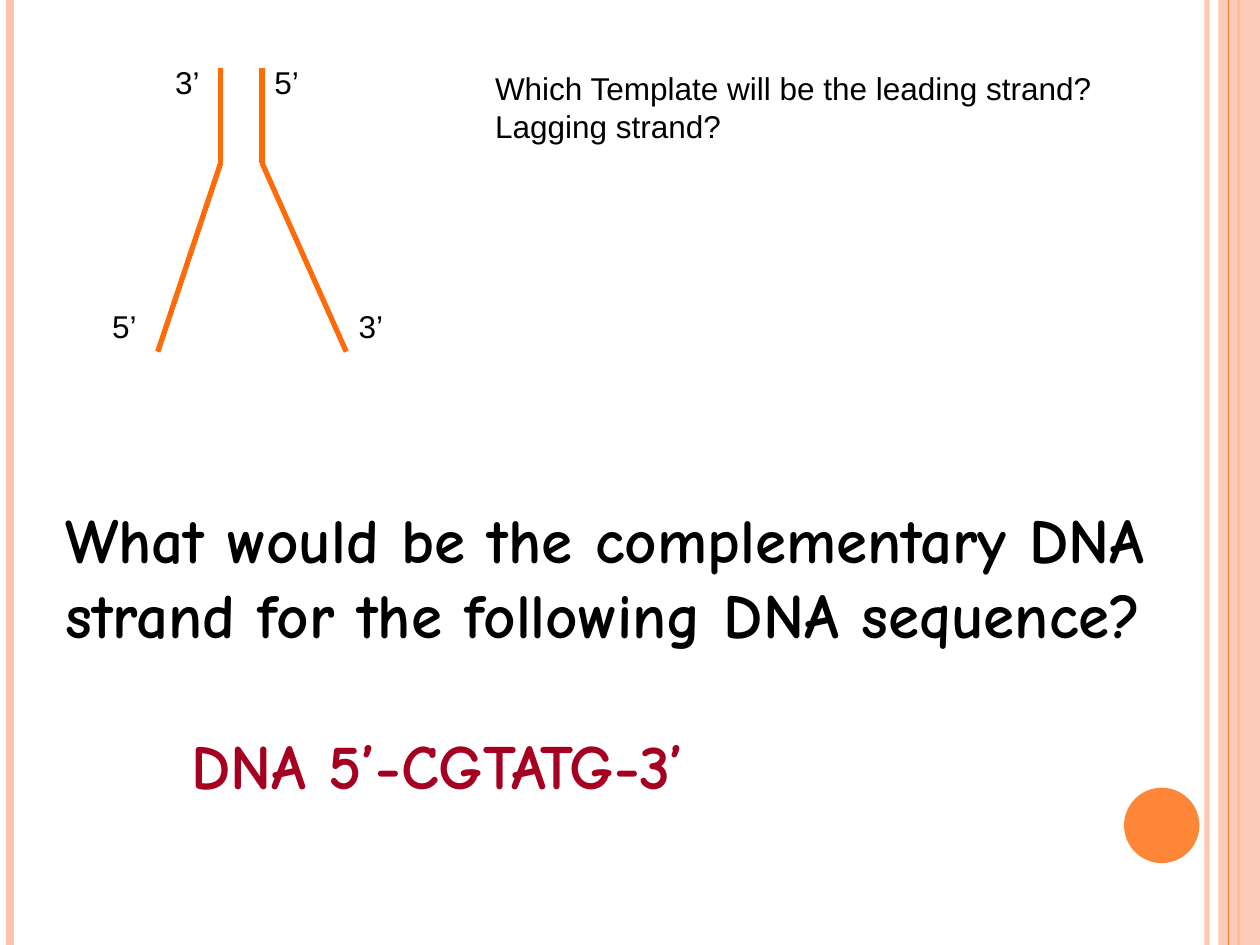
import pptx
import pptx.util
import pptx.dml.color
import pptx.enum.shapes
import pptx.enum.text
import pptx.oxml.ns
import lxml.etree

Cm, Pt = pptx.util.Cm, pptx.util.Pt
W, H = 25.4, 19.05

COLORS = {"peach": "FEC3AE", "orange": "FE8637", "strand": "FF6B0A",
          "black": "000000", "red": "A50021"}

# x, colour, width in points, opacity in percent
RULES_BEHIND = [(24.33, "peach", 3, 93), (0.2, "peach", 4.5, 100), (24.97, "orange", 1.5, 100)]
RULES_FRONT = [(24.77, "orange", 0.75, 100)]
BAND = (24.56, 0, 0.84, H)
DOT = (22.66, 15.88, 1.52, 1.52)

TOP, FORK, BOTTOM = 1.37, 3.28, 7.09
STRANDS = [(4.45, 3.18), (5.28, 6.98)]  # x above the fork, x at the open end

END_LABELS = [("3’", 3.28, 1.14), ("5’", 5.28, 1.14), ("5’", 2.01, 6.07), ("3’", 6.98, 6.07)]
STRAND_QUESTION = ["Which Template will be the leading strand?", "Lagging strand?"]
DNA_QUESTION = ["What would be the complementary DNA strand for the following DNA sequence?",
                "DNA 5’-CGTATG-3’"]


def rgb(name):
    return pptx.dml.color.RGBColor.from_string(COLORS[name])


def set_opacity(fill, percent):
    """Add an alpha value to the solid colour found inside an XML element."""
    color = next(fill.iter(pptx.oxml.ns.qn("a:srgbClr")))
    alpha = lxml.etree.SubElement(color, pptx.oxml.ns.qn("a:alpha"))
    alpha.set("val", str(percent * 1000))


def add_line(slide, x1, y1, x2, y2, color, width, opacity=100):
    ln = slide.shapes.add_connector(pptx.enum.shapes.MSO_CONNECTOR.STRAIGHT,
                                    Cm(x1), Cm(y1), Cm(x2), Cm(y2))
    ln.line.color.rgb = rgb(color)
    ln.line.width = Pt(width)
    props = ln._element.spPr
    lxml.etree.SubElement(props, pptx.oxml.ns.qn("a:effectLst"))
    if opacity < 100:
        set_opacity(props, opacity)


def add_rules(slide, rules):
    for x, color, width, opacity in rules:
        add_line(slide, x, 0, x, H, color, width, opacity)


def add_plain_shape(slide, kind, box, color):
    sp = slide.shapes.add_shape(kind, *map(Cm, box))
    sp.shadow.inherit = False
    sp.fill.solid()
    sp.fill.fore_color.rgb = rgb(color)
    sp.line.fill.background()
    return sp


def add_text(slide, lines, box, size=18, font="Arial", bold=False):
    tf = slide.shapes.add_textbox(*map(Cm, box)).text_frame
    tf.word_wrap = True
    tf.vertical_anchor = pptx.enum.text.MSO_ANCHOR.TOP
    for i, line in enumerate(lines):
        p = tf.paragraphs[0] if i == 0 else tf.add_paragraph()
        p.text = line
        p.font.size = Pt(size)
        p.font.name = font
        p.font.bold = bold
        p.font.color.rgb = rgb("black")
    return tf


def main():
    prs = pptx.Presentation()
    prs.slide_width, prs.slide_height = Cm(W), Cm(H)
    slide = prs.slides.add_slide(prs.slide_layouts[6])
    shapes = pptx.enum.shapes.MSO_SHAPE

    add_rules(slide, RULES_BEHIND)
    band = add_plain_shape(slide, shapes.RECTANGLE, BAND, "peach")
    set_opacity(band._element.spPr, 87)
    add_rules(slide, RULES_FRONT)
    add_plain_shape(slide, shapes.OVAL, DOT, "orange")

    tf = add_text(slide, DNA_QUESTION, (1.07, 9.96, 22.86, 7.95), 36, "Comic Neue", True)
    sequence = tf.paragraphs[1]
    sequence.font.color.rgb = rgb("red")
    sequence.space_before = Pt(43)
    sequence._p.get_or_add_pPr().set("marL", str(Cm(2.54)))

    add_text(slide, STRAND_QUESTION, (9.73, 1.27, 12.7, 1.8))

    for x, x_end in STRANDS:
        add_line(slide, x, TOP, x, FORK, "strand", 3)
        add_line(slide, x, FORK, x_end, BOTTOM, "strand", 3)
    for label, x, y in END_LABELS:
        add_text(slide, [label], (x, y, 1.27, 1.02))

    prs.save("out.pptx")


if __name__ == "__main__":
    main()
